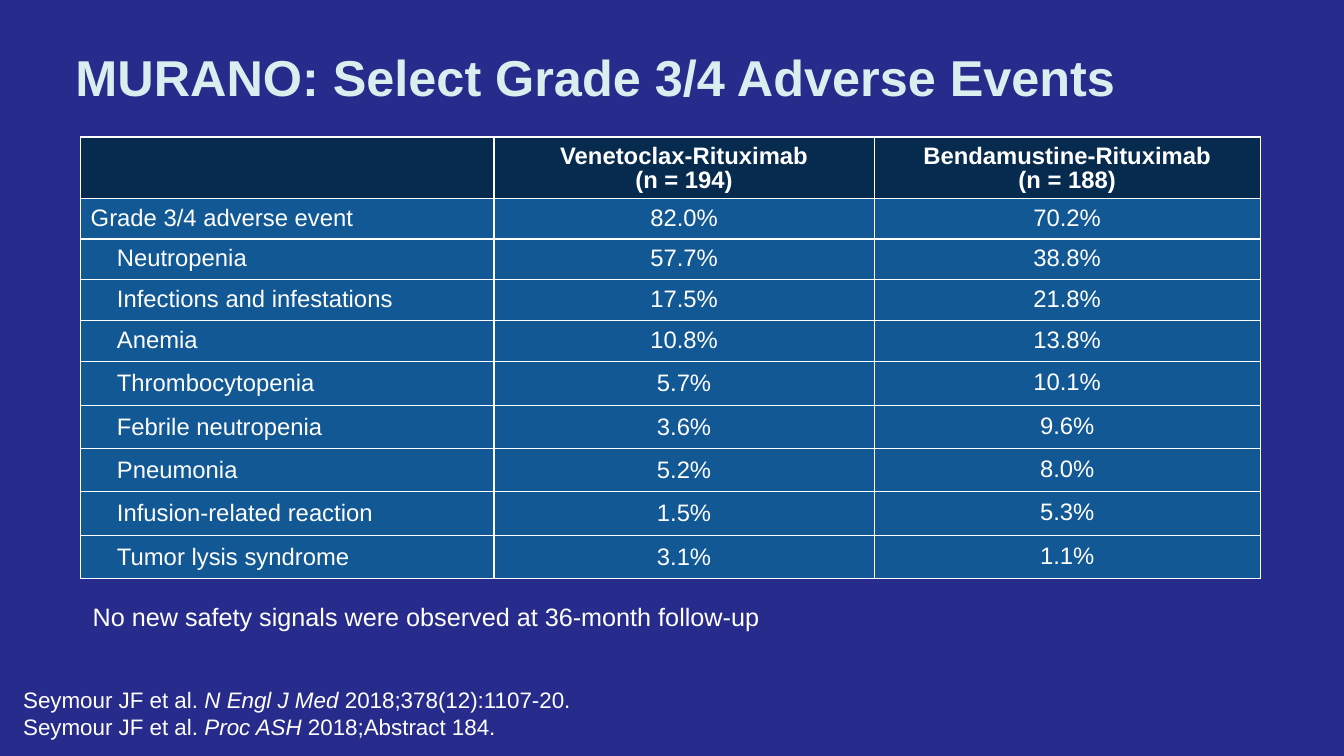
from pptx import Presentation
from pptx.dml.color import RGBColor
from pptx.enum.text import MSO_ANCHOR, PP_ALIGN
from pptx.oxml import parse_xml
from pptx.oxml.ns import nsdecls
from pptx.util import Pt

PX = 9144
LEFT, CENTER = PP_ALIGN.LEFT, PP_ALIGN.CENTER
TOP, MIDDLE, BOTTOM = MSO_ANCHOR.TOP, MSO_ANCHOR.MIDDLE, MSO_ANCHOR.BOTTOM

COLORS = {
    "background": "272B8B",
    "title": "DAEDEF",
    "text": "FFFFFF",
    "header": "072B4F",
    "body": "125894",
}

COLUMN_WIDTHS = [410, 377, 383]
ROW_HEIGHTS = [61, 40, 40, 41, 41] + [43] * 5
INDENT = 26
HEADERS = ["", "Venetoclax-Rituximab\n(n = 194)", "Bendamustine-Rituximab\n(n = 188)"]
EVENTS = [
    ("Grade 3/4 adverse event", "82.0%", "70.2%"),
    ("Neutropenia", "57.7%", "38.8%"),
    ("Infections and infestations", "17.5%", "21.8%"),
    ("Anemia", "10.8%", "13.8%"),
    ("Thrombocytopenia", "5.7%", "10.1%"),
    ("Febrile neutropenia", "3.6%", "9.6%"),
    ("Pneumonia", "5.2%", "8.0%"),
    ("Infusion-related reaction", "1.5%", "5.3%"),
    ("Tumor lysis syndrome", "3.1%", "1.1%"),
]
REFERENCES = [
    ("Seymour JF et al. ", "N Engl J Med ", "2018;378(12):1107-20."),
    ("Seymour JF et al. ", "Proc ASH ", "2018;Abstract 184."),
]


class SlideBuilder:
    font = "Arial"

    def __init__(self, prs):
        self.slide = prs.slides.add_slide(prs.slide_layouts[6])
        self.fill(self.slide.background, "background")

    def color(self, name):
        return RGBColor.from_string(COLORS[name])

    def fill(self, target, name):
        target.fill.solid()
        target.fill.fore_color.rgb = self.color(name)

    def run(self, p, text, size, color="text", **formats):
        r = p.add_run()
        r.text = text
        r.font.color.rgb = self.color(color)
        for name, value in {"name": self.font, "size": Pt(size), **formats}.items():
            setattr(r.font, name, value)

    def text(self, box, paragraphs, size, color="text", bold=False,
             wrap=True, anchor=TOP, margins=(10, 5, 10, 5)):
        sp = self.slide.shapes.add_textbox(*(v * PX for v in box))
        tf = sp.text_frame
        tf.word_wrap, tf.vertical_anchor = wrap, anchor
        for side, value in zip(("left", "top", "right", "bottom"), margins):
            setattr(tf, f"margin_{side}", value * PX)
        for i, parts in enumerate(paragraphs):
            p = tf.add_paragraph() if i else tf.paragraphs[0]
            for j, part in enumerate(parts):
                self.run(p, part, size, color, bold=bold, italic=j == 1)

    def border(self, cell):
        tc_pr = cell._tc.get_or_add_tcPr()
        for side in "LRTB":
            tc_pr.append(parse_xml(
                f'<a:ln{side} {nsdecls("a")} w="12700"><a:solidFill>'
                f'<a:srgbClr val="{COLORS["text"]}"/></a:solidFill></a:ln{side}>'))

    def cell(self, cell, text, fill, align, anchor, spacing, indent, bold):
        self.border(cell)
        self.fill(cell, fill)
        margins = {"left": 10 + indent, "top": 5, "right": 10, "bottom": 5}
        for side, value in margins.items():
            setattr(cell, f"margin_{side}", value * PX)
        cell.vertical_anchor = anchor
        tf = cell.text_frame
        for i, line in enumerate(text.split("\n") if text else []):
            p = tf.add_paragraph() if i else tf.paragraphs[0]
            p.alignment, p.line_spacing = align, spacing
            self.run(p, line, 17, bold=bold)

    def table(self, left, top, widths, heights, rows):
        box = (left, top, sum(widths), sum(heights))
        table = self.slide.shapes.add_table(
            len(rows), len(widths), *(v * PX for v in box)).table
        table.first_row = table.horz_banding = False
        for column, width in zip(table.columns, widths):
            column.width = width * PX
        for i, (row, height) in enumerate(zip(rows, heights)):
            table.rows[i].height = height * PX
            header = i == 0
            for j, text in enumerate(row):
                self.cell(
                    table.cell(i, j), text,
                    fill="header" if header else "body",
                    align=CENTER if header or j else LEFT,
                    anchor=BOTTOM if header else MIDDLE,
                    spacing=0.9 if i < 5 or j == 2 else 1.0,
                    indent=INDENT if i > 1 and j == 0 else 0,
                    bold=header)


def main():
    prs = Presentation()
    prs.slide_width, prs.slide_height = 1333 * PX, 750 * PX
    s = SlideBuilder(prs)
    s.text((65, 47, 1200, 58), [("MURANO: Select Grade 3/4 Adverse Events",)],
           36, "title", bold=True, anchor=MIDDLE)
    s.table(80, 136, COLUMN_WIDTHS, ROW_HEIGHTS, [HEADERS, *EVENTS])
    s.text((3, 676, 1200, 53), REFERENCES, 16, margins=(20, 5, 10, 10))
    s.text((82, 592, 688, 40),
           [("No new safety signals were observed at 36-month follow-up",)],
           18, wrap=False)
    prs.save("out.pptx")


if __name__ == "__main__":
    main()
